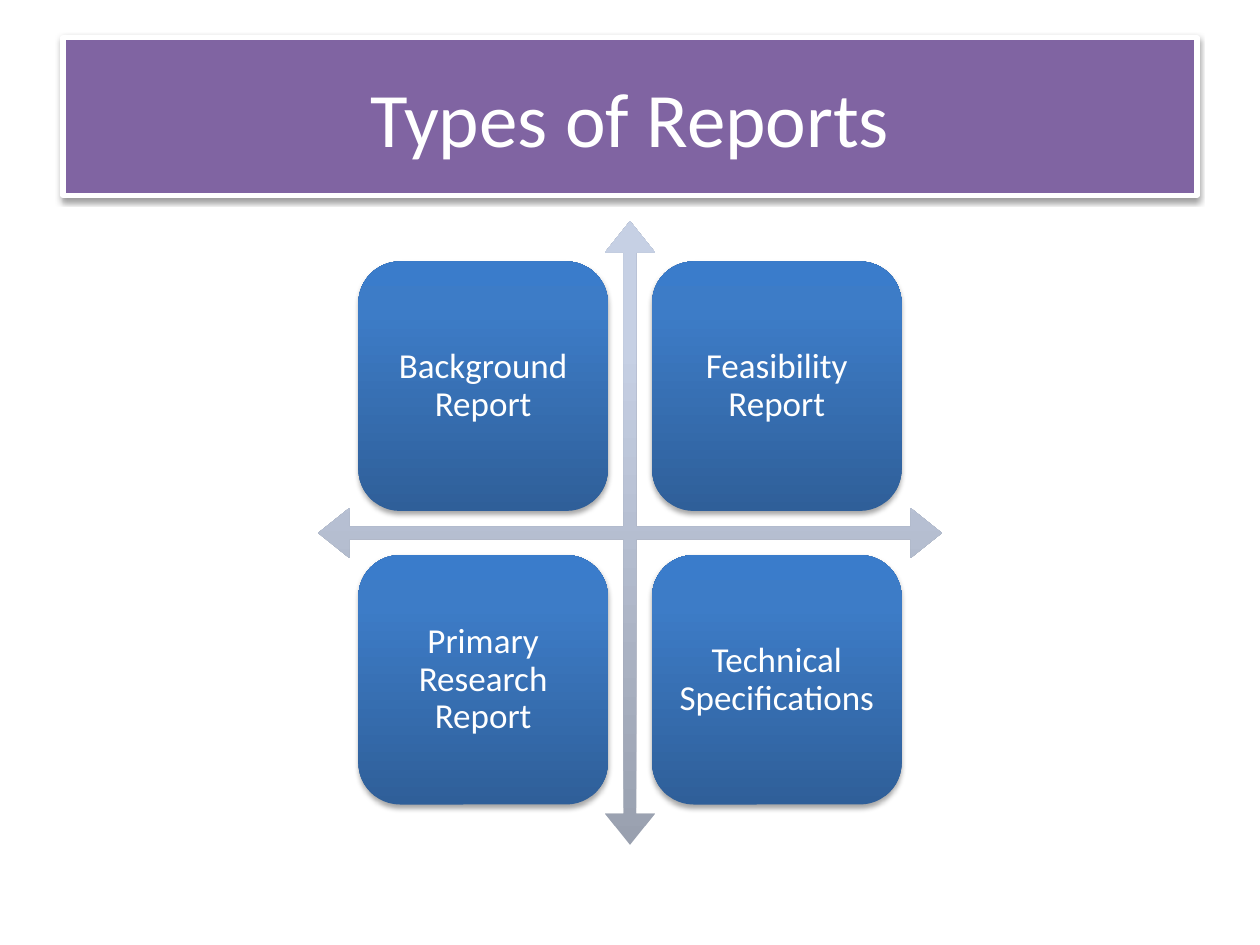
import copy

import pptx
import pptx.dml.color
import pptx.enum.shapes
import pptx.enum.text
import pptx.oxml
import pptx.oxml.ns
import pptx.util

Inches = pptx.util.Inches
Pt = pptx.util.Pt
SHAPE = pptx.enum.shapes.MSO_SHAPE


def color(code):
    return pptx.dml.color.RGBColor.from_string(code)


class Deck:
    font = "Calibri"
    white = "FFFFFF"
    purple = "8064A2"
    blues = ((0, "2F5F99"), (0.8, "3D7CC7"), (1, "3A7CCB"))
    grays = ((0, "99A0AF"), (0.8, "C6D0E4"), (1, "C7D1E5"))

    def __init__(self):
        self.prs = pptx.Presentation()
        self.prs.slide_width = Inches(10)
        self.prs.slide_height = Inches(7.5)
        self.slide = self.prs.slides.add_slide(self.prs.slide_layouts[5])

    def label(self, shape, text, size):
        frame = shape.text_frame
        frame.word_wrap = True
        frame.vertical_anchor = pptx.enum.text.MSO_ANCHOR.MIDDLE
        para = frame.paragraphs[0]
        para.alignment = pptx.enum.text.PP_ALIGN.CENTER
        run = para.add_run()
        run.text = text
        run.font.name = self.font
        run.font.size = Pt(size)
        run.font.color.rgb = color(self.white)
        return para

    def shade(self, shape, alpha, dist):
        """Drop a soft black shadow straight down."""
        shape.shadow.inherit = False
        effects = shape._element.spPr.find(pptx.oxml.ns.qn("a:effectLst"))
        effects.append(pptx.oxml.parse_xml(
            f'<a:outerShdw {pptx.oxml.ns.nsdecls("a")} blurRad="{Pt(3.1)}"'
            f' dist="{Pt(dist)}" dir="5400000" rotWithShape="0">'
            f'<a:srgbClr val="000000"><a:alpha val="{alpha * 1000}"/>'
            '</a:srgbClr></a:outerShdw>'))

    def blend(self, shape, stops):
        """Fill from bottom to top with three colour stops."""
        fill = shape.fill
        fill.gradient()
        fill.gradient_angle = 90
        items = shape._element.spPr.find(
            f'{pptx.oxml.ns.qn("a:gradFill")}/{pptx.oxml.ns.qn("a:gsLst")}')
        items.append(copy.deepcopy(items[0]))
        for stop, (place, code) in zip(fill.gradient_stops, stops):
            stop.position = place
            stop.color.rgb = color(code)

    def title(self, text, left, top, width, height):
        shape = self.slide.shapes.title
        shape.left, shape.top = Inches(left), Inches(top)
        shape.width, shape.height = Inches(width), Inches(height)
        shape.fill.solid()
        shape.fill.fore_color.rgb = color(self.purple)
        shape.line.color.rgb = color(self.white)
        shape.line.width = Pt(3)
        self.shade(shape, 38, 1.6)
        self.label(shape, text, 44)

    def block(self, kind, left, top, side, stops):
        shape = self.slide.shapes.add_shape(
            kind, Inches(left), Inches(top), Inches(side), Inches(side))
        shape.shadow.inherit = False
        shape.line.fill.background()
        self.blend(shape, stops)
        return shape

    def cross(self, left, top, side):
        shape = self.block(SHAPE.QUAD_ARROW, left, top, side, self.grays)
        for index, value in enumerate((0.02, 0.04, 0.05)):
            shape.adjustments[index] = value

    def card(self, text, left, top, side):
        shape = self.block(SHAPE.ROUNDED_RECTANGLE, left, top, side, self.blues)
        self.shade(shape, 35, 1.8)
        frame = shape.text_frame
        frame.margin_left = frame.margin_right = Inches(0.08)
        frame.margin_top = frame.margin_bottom = Inches(0.08)
        para = self.label(shape, text, 20)
        para.line_spacing = 0.9
        para.space_after = Pt(7)


def main():
    deck = Deck()
    deck.title("Types of Reports", 0.5, 0.3, 9, 1.25)

    # Crossed arrows
    mid_x, mid_y, span = 5, 4.23, 4.95
    deck.cross(mid_x - span / 2, mid_y - span / 2, span)

    # One card in each quadrant
    side, gap = 1.98, 0.35
    names = ("Background Report", "Feasibility Report",
             "Primary Research Report", "Technical Specifications")
    for index, name in enumerate(names):
        row, col = divmod(index, 2)
        left = mid_x - gap / 2 - side + col * (side + gap)
        top = mid_y - gap / 2 - side + row * (side + gap)
        deck.card(name, left, top, side)

    deck.prs.save("out.pptx")


if __name__ == "__main__":
    main()
